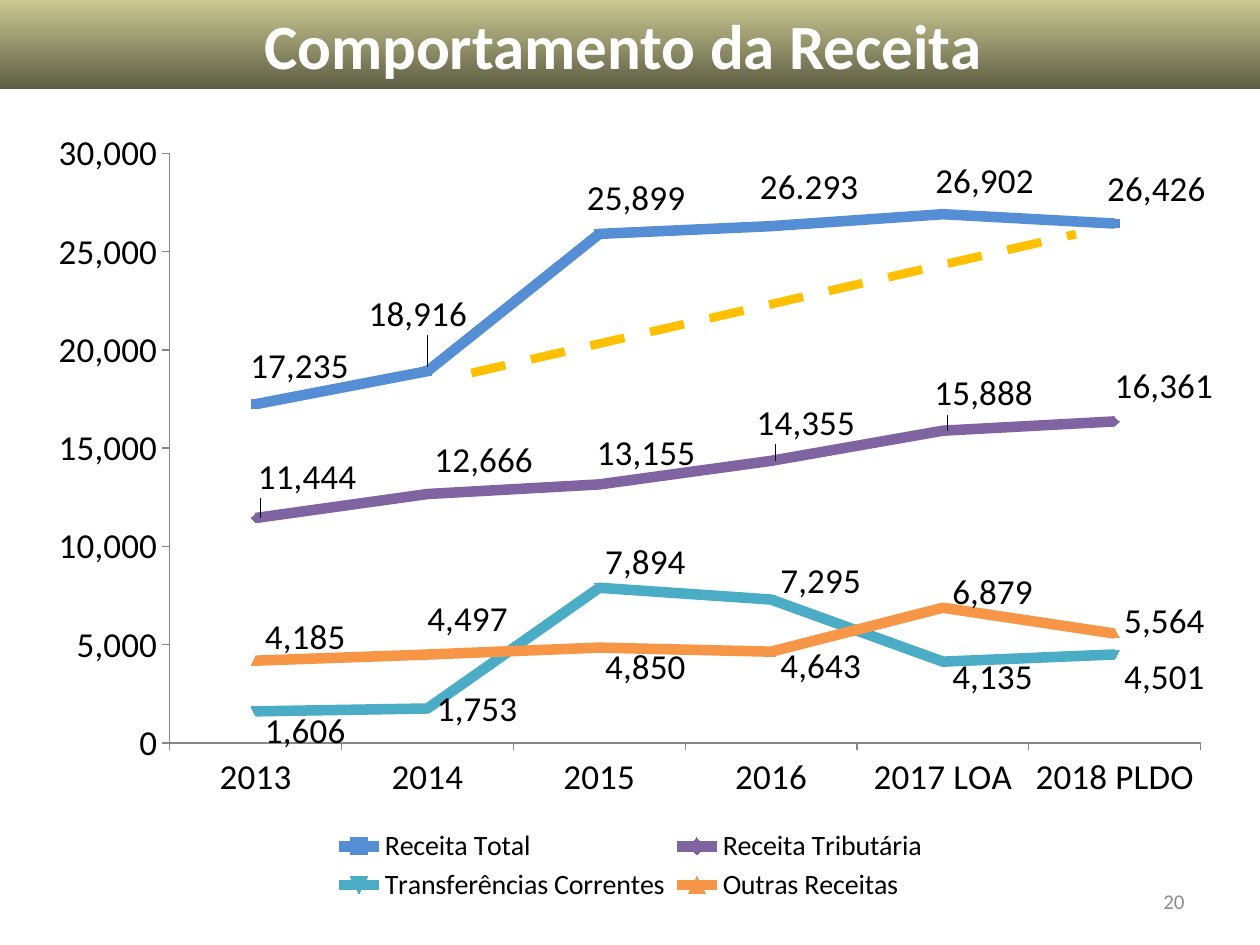
from lxml.etree import SubElement, fromstring
from pptx import Presentation
from pptx.chart.data import CategoryChartData
from pptx.dml.color import RGBColor
from pptx.enum.chart import XL_CHART_TYPE as ChartType, XL_LABEL_POSITION as LabelPos
from pptx.enum.chart import XL_LEGEND_POSITION as LegendPos, XL_TICK_MARK as Tick
from pptx.enum.dml import MSO_LINE as Dash
from pptx.enum.shapes import MSO_CONNECTOR as Connector, MSO_SHAPE as Shape
from pptx.enum.text import MSO_ANCHOR as Anchor, PP_ALIGN as Align
from pptx.oxml.ns import nsdecls, qn
from pptx.util import Cm, Pt

COLORS = {
    "banner_top": "CAC992", "banner_bottom": "5D5D44", "title": "FFFFFF",
    "page": "8C8C8C", "text": "000000", "axis": "868686", "trend": "FFC000",
    "total": "558ED5", "tax": "8064A2", "transfers": "4BACC6", "other": "F79646",
}
FONT = "Calibri"
YEARS = ["2013", "2014", "2015", "2016", "2017 LOA", "2018 PLDO"]
REVENUES = [
    ("Receita Total", "total", LabelPos.ABOVE,
     [17235, 18916, 25899, 26293, 26902, 26426],
     [(3.7, -0.9), (-0.8, -3.3), (3.1, -0.6), (3.2, -1), (3.5, -0.3), (3.5, -0.4)]),
    ("Receita Tributária", "tax", LabelPos.RIGHT,
     [11444, 12666, 13155, 14355, 15888, 16361],
     [(-0.6, -5.2), (-0.2, -4.3), (-1, -4), (-2, -4.8), (-1.5, -4.7), (-0.8, -4.4)]),
    ("Transferências Correntes", "transfers", LabelPos.RIGHT,
     [1606, 1753, 7894, 7295, 4135, 4501],
     [(0, 2.5), (0, 0), (-0.3, -3.3), (0, -2.4), (0, 1.9), (0, 2.8)]),
    ("Outras Receitas", "other", LabelPos.RIGHT,
     [4185, 4497, 4850, 4643, 6879, 5564],
     [(0, -3), (-0.8, -4.5), (-0.3, 2.4), (0, 1.8), (0, -2), (0, -1.6)]),
]


def style_font(font, size, color, bold=False):
    font.name, font.size, font.bold = FONT, Pt(size), bold
    font.color.rgb = RGBColor.from_string(COLORS[color])


def manual_layout(**percents):
    layout = fromstring(f"<c:layout {nsdecls('c')}><c:manualLayout/></c:layout>")
    for tag, value in percents.items():
        text = value if isinstance(value, str) else f"{value / 100:.4f}"
        SubElement(layout[0], qn(f"c:{tag}"), val=text)
    return layout


deck = Presentation()
deck.slide_width, deck.slide_height = Cm(25.4), Cm(19.05)
slide = deck.slides.add_slide(deck.slide_layouts[6])

page = slide.shapes.add_textbox(Cm(18.21), Cm(17.65), Cm(5.92), Cm(1.02)).text_frame
page.word_wrap = True
page.vertical_anchor = Anchor.MIDDLE
page.paragraphs[0].alignment = Align.RIGHT
page_number = page.paragraphs[0].add_run()
page_number.text = "20"
style_font(page_number.font, 12, "page")

banner = slide.shapes.add_shape(Shape.RECTANGLE, 0, 0, Cm(25.4), Cm(1.8))
banner.shadow.inherit = False
banner.line.fill.background()
banner.fill.gradient()
banner.fill.gradient_angle = 270
for stop, position, shade in zip(banner.fill.gradient_stops, (0, 1), ("banner_top", "banner_bottom")):
    stop.position = position
    stop.color.rgb = RGBColor.from_string(COLORS[shade])
banner.text_frame.vertical_anchor = Anchor.MIDDLE
heading = banner.text_frame.paragraphs[0]
heading.alignment = Align.CENTER
title = heading.add_run()
title.text = "Comportamento da Receita "
style_font(title.font, 36, "title", bold=True)

revenue_data = CategoryChartData(number_format="#,##0")
revenue_data.categories = YEARS
for name, _, _, values, _ in REVENUES:
    revenue_data.add_series(name, values)
chart = slide.shapes.add_chart(
    ChartType.LINE_MARKERS, Cm(0.71), Cm(2.34), Cm(24), Cm(16), revenue_data).chart
style_font(chart.font, 10, "text")
chart.has_title = False
chart.has_legend = True
chart.legend.position = LegendPos.BOTTOM
chart.legend.include_in_layout = False
style_font(chart.legend.font, 16, "text")

for axis in (chart.category_axis, chart.value_axis):
    axis.has_major_gridlines = False
    axis.major_tick_mark = Tick.OUTSIDE
    axis.minor_tick_mark = Tick.NONE
    axis.format.line.color.rgb = RGBColor.from_string(COLORS["axis"])
    axis.format.line.width = Pt(0.75)
    style_font(axis.tick_labels.font, 20, "text")
scale = chart.value_axis
scale.minimum_scale, scale.maximum_scale, scale.major_unit = 0, 30000, 5000
scale.tick_labels.number_format = "#,##0"
scale.tick_labels.number_format_is_linked = False

plot_area = chart.plots[0]._element.getparent()
for old_layout in plot_area.findall(qn("c:layout")):
    plot_area.remove(old_layout)
plot_area.insert(0, manual_layout(
    layoutTarget="inner", xMode="edge", yMode="edge", x=11.3, y=4.7, w=86.6, h=74.3))
legend_box = chart.legend._element
for old_layout in legend_box.findall(qn("c:layout")):
    legend_box.remove(old_layout)
legend_box.find(qn("c:legendPos")).addnext(manual_layout(
    xMode="edge", yMode="edge", x=24.5, y=89.3, w=51, h=10.3))

for series, (name, color, position, _, offsets) in zip(chart.plots[0].series, REVENUES):
    rgb = RGBColor.from_string(COLORS[color])
    series.smooth = False
    series.format.line.color.rgb = rgb
    series.format.line.width = Pt(6)
    series.marker.size = 5
    series.marker.format.fill.solid()
    series.marker.format.fill.fore_color.rgb = rgb
    series.marker.format.line.color.rgb = rgb
    labels = series.data_labels
    labels.show_value = True
    labels.number_format = "#,##0"
    labels.number_format_is_linked = False
    labels.position = position
    style_font(labels.font, 20, "text")
    for index, (dx, dy) in enumerate(offsets):
        label = series.points[index].data_label
        if (name, YEARS[index]) == ("Receita Total", "2016"):
            typed_value = label.text_frame.paragraphs[0].add_run()
            typed_value.text = "26.293"
            style_font(typed_value.font, 20, "text")
        else:
            style_font(label.font, 20, "text")
        label.position = position
        entry = labels._element.findall(qn("c:dLbl"))[index]
        entry.find(qn("c:idx")).addnext(manual_layout(x=dx, y=dy))

trend = slide.shapes.add_connector(Connector.STRAIGHT, Cm(9.5), Cm(7.52), Cm(21.69), Cm(4.72))
trend.line.color.rgb = RGBColor.from_string(COLORS["trend"])
trend.line.width = Pt(5)
trend.line.dash_style = Dash.DASH
SubElement(trend._element.spPr, qn("a:effectLst"))

deck.save("out.pptx")
